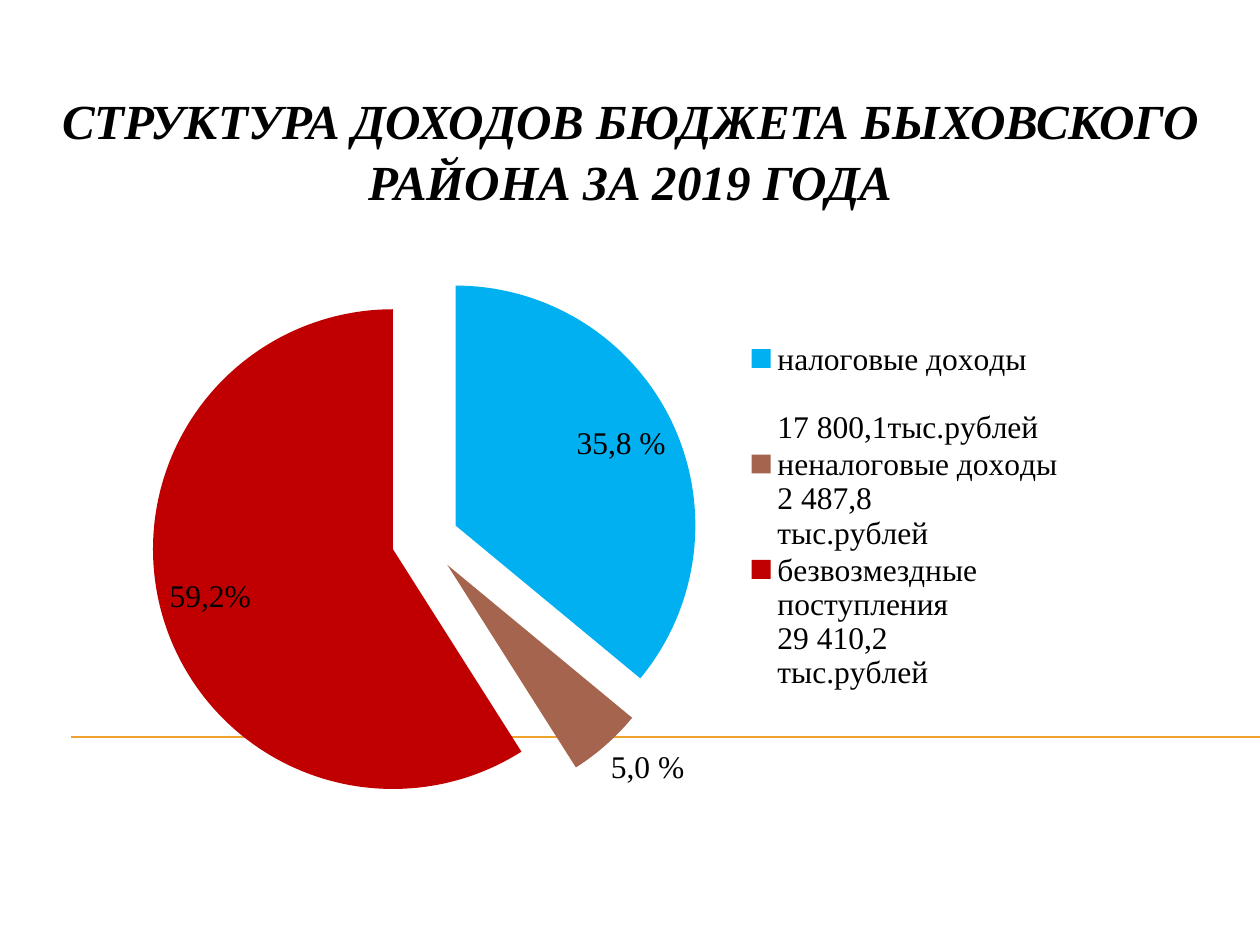
from lxml.etree import SubElement
from pptx import Presentation
from pptx.chart.data import CategoryChartData
from pptx.dml.color import RGBColor
from pptx.enum.chart import XL_CHART_TYPE as ChartType, XL_LABEL_POSITION as LabelPlace
from pptx.enum.chart import XL_LEGEND_POSITION as LegendPlace
from pptx.enum.shapes import MSO_CONNECTOR as Connector
from pptx.enum.text import MSO_ANCHOR as Anchor, PP_ALIGN as Align
from pptx.oxml import parse_xml
from pptx.oxml.ns import nsdecls, qn
from pptx.util import Pt

PX = 914400 // 126
SERIF = "Times New Roman"
COLORS = {
    "text": "000000",
    "rule": "F0A22E",
    "tax": "00B0F0",
    "other": "A5644E",
    "grants": "C00000",
}
SLICES = [
    ("налоговые доходы\n\n17 800,1тыс.рублей", 36, "35,8 %", "tax", LabelPlace.INSIDE_END),
    ("неналоговые доходы\n2 487,8\nтыс.рублей", 5, "5,0 %", "other", LabelPlace.OUTSIDE_END),
    ("безвозмездные\nпоступления\n29 410,2\nтыс.рублей", 59, "59,2%", "grants", LabelPlace.INSIDE_END),
]


def style_font(font, size, face=SERIF):
    font.name = face
    font.size = Pt(size)
    font.color.rgb = RGBColor.from_string(COLORS["text"])


def manual_layout(left, top, width, height, target=""):
    return parse_xml(
        f'<c:layout {nsdecls("c")}><c:manualLayout>{target}'
        f'<c:xMode val="edge"/><c:yMode val="edge"/><c:x val="{left}"/><c:y val="{top}"/>'
        f'<c:w val="{width}"/><c:h val="{height}"/></c:manualLayout></c:layout>'
    )


deck = Presentation()
deck.slide_width, deck.slide_height = 1260 * PX, 945 * PX
page = deck.slides.add_slide(deck.slide_layouts[6])

rule = page.shapes.add_connector(Connector.STRAIGHT, 71 * PX, 737 * PX, 1260 * PX, 737 * PX)
rule.line.color.rgb = RGBColor.from_string(COLORS["rule"])
rule.line.width = Pt(0.75)
SubElement(rule._element.spPr, qn("a:effectLst"))

data = CategoryChartData(number_format="0")
data.categories = [name for name, *rest in SLICES]
data.add_series("Series 1", [value for name, value, *rest in SLICES])
frame = page.shapes.add_chart(ChartType.PIE, 54 * PX, 193 * PX, 1142 * PX, 667 * PX, data)
chart = frame.chart
chart.has_title = False
style_font(chart.font, 18, "Cabin")
chart.has_legend = True
legend = chart.legend
legend.position = LegendPlace.RIGHT
legend.include_in_layout = False
style_font(legend.font, 18)
for old_layout in legend._element.findall(qn("c:layout")):
    legend._element.remove(old_layout)
legend._element.find(qn("c:legendPos")).addnext(manual_layout(0.6, 0.22, 0.29, 0.53))

plot = chart.plots[0]
plot.vary_by_categories = True
plot.has_data_labels = True
plot.data_labels.show_percentage = True
plot.data_labels.show_value = False
style_font(plot.data_labels.font, 18)

series = plot.series[0]
for index, (name, value, label_text, fill, place) in enumerate(SLICES):
    point = series.points[index]
    point.format.fill.solid()
    point.format.fill.fore_color.rgb = RGBColor.from_string(COLORS[fill])
    label = point.data_label
    label.text_frame.text = label_text
    style_font(label.text_frame.paragraphs[0].runs[0].font, 18)
    label.position = place
explosion = parse_xml(f'<c:explosion {nsdecls("c")} val="14"/>')
series._element.find(qn("c:dPt")).addprevious(explosion)

plot_area = chart._chartSpace.chart.plotArea
for old_layout in plot_area.findall(qn("c:layout")):
    plot_area.remove(old_layout)
plot_area.insert(0, manual_layout(0.03, 0.11, 0.59, 0.82, '<c:layoutTarget val="inner"/>'))

title = page.shapes.add_textbox(45 * PX, 83 * PX, 1171 * PX, 73 * PX)
title.text_frame.word_wrap = True
title.text_frame.vertical_anchor = Anchor.TOP
para = title.text_frame.paragraphs[0]
para.text = "СТРУКТУРА ДОХОДОВ БЮДЖЕТА БЫХОВСКОГО РАЙОНА ЗА 2019 ГОДА"
para.alignment = Align.CENTER
para.line_spacing = 1.03
style_font(para.font, 28)
para.font.bold = True
para.font.italic = True

deck.save("out.pptx")
